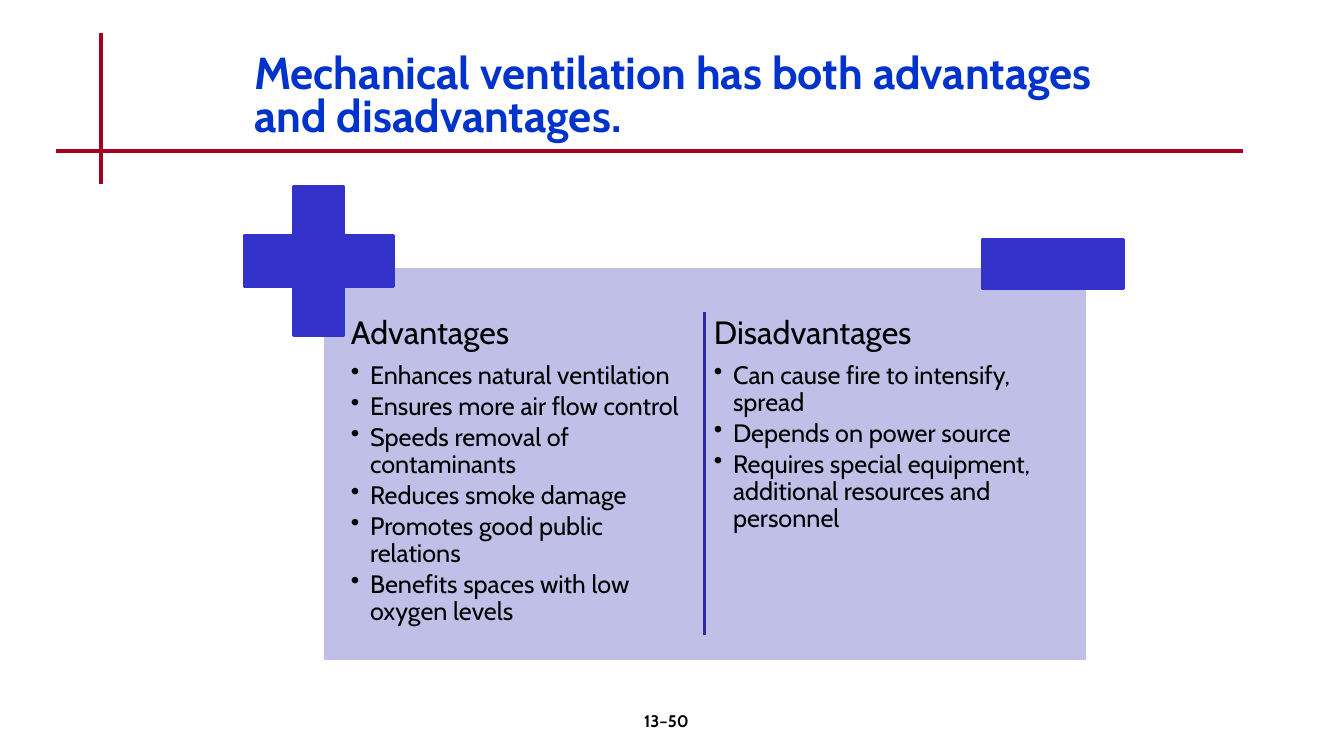
from lxml.etree import SubElement
from pptx import Presentation
from pptx.dml.color import RGBColor
from pptx.enum.shapes import MSO_CONNECTOR as Link, MSO_SHAPE as Kind
from pptx.enum.text import MSO_ANCHOR as Anchor, MSO_AUTO_SIZE as Fit, PP_ALIGN as Align
from pptx.oxml.ns import qn
from pptx.util import Inches, Pt

FONT = "Cabin"
RED, BLUE, NAVY = "A50021", "3333CC", "2929A3"
COLS = [
    (3.43, "Advantages", [
        "Enhances natural ventilation",
        "Ensures more air flow control",
        "Speeds removal of contaminants",
        "Reduces smoke damage",
        "Promotes good public relations",
        "Benefits spaces with low oxygen levels",
    ]),
    (7.03, "Disadvantages", [
        "Can cause fire to intensify, spread",
        "Depends on power source",
        "Requires special equipment, additional resources and personnel",
    ]),
]


def rgb(code):
    return RGBColor.from_string(code)


def write(para, text, size=18, color="000000", bold=False, align=Align.LEFT,
          lead=1.0, after=0, bullet=False):
    """Fill one paragraph with formatted text."""
    props = para._p.get_or_add_pPr()
    para.alignment = align
    para.line_spacing = lead
    para.space_before = Pt(0)
    para.space_after = Pt(after)
    if bullet:
        props.set("marL", str(Inches(0.19)))
        props.set("indent", str(-Inches(0.19)))
        SubElement(props, qn("a:buChar")).set("char", "•")
    run = para.add_run()
    run.text = text
    font = run.font
    font.name, font.size, font.bold = FONT, Pt(size), bold
    font.color.rgb = rgb(color)


class Board:
    """Holds the slide and draws its elements."""

    def __init__(self, deck):
        self.slide = deck.slides.add_slide(deck.slide_layouts[5])
        self.shapes = self.slide.shapes

    def title(self, text, *box):
        head = self.shapes.title
        head.left, head.top, head.width, head.height = map(Inches, box)
        frame = head.text_frame
        frame.word_wrap, frame.auto_size = True, Fit.NONE
        frame.vertical_anchor = Anchor.MIDDLE
        write(frame.paragraphs[0], text, size=32, color="0033CC", bold=True, lead=0.8)

    def line(self, x1, y1, x2, y2, color, width):
        link = self.shapes.add_connector(
            Link.STRAIGHT, *map(Inches, (x1, y1, x2, y2)))
        link.line.color.rgb = rgb(color)
        link.line.width = Pt(width)
        SubElement(link._element.spPr, qn("a:effectLst"))

    def shape(self, kind, *box, fill, edge):
        item = self.shapes.add_shape(kind, *map(Inches, box))
        item.shadow.inherit = False
        item.fill.solid()
        item.fill.fore_color.rgb = rgb(fill)
        item.line.color.rgb = rgb(edge)
        item.line.width = Pt(2)
        return item

    def text(self, *box, inset=0.1):
        """Add an empty text box and return its frame."""
        frame = self.shapes.add_textbox(*map(Inches, box)).text_frame
        frame.word_wrap = True
        frame.margin_left = frame.margin_right = Inches(inset)
        frame.margin_top = frame.margin_bottom = Inches(0.05)
        return frame

    def column(self, left, head, points):
        frame = self.text(left, 3.09, 3.52, 3.35, inset=0.05)
        write(frame.paragraphs[0], head, size=23, lead=0.9, after=8)
        for point in points:
            write(frame.add_paragraph(), point, lead=0.9, after=2.7, bullet=True)


def main():
    deck = Presentation()
    deck.slide_width, deck.slide_height = Inches(13.33), Inches(7.5)
    board = Board(deck)
    board.line(1, 0.33, 1, 1.83, RED, 3)
    board.line(0.56, 1.5, 12.33, 1.5, RED, 3)
    board.title("Mechanical ventilation has both advantages and disadvantages.",
                2.42, 0.47, 8.96, 1)
    page = board.text(5.22, 7, 2.78, 0.5)
    write(page.paragraphs[0], "13–50", size=12, bold=True, align=Align.CENTER)
    board.shape(Kind.RECTANGLE, 3.2, 2.64, 7.59, 3.92, fill="BFBFE7", edge="FFFFFF")
    for col in COLS:
        board.column(*col)
    plus = board.shape(Kind.CROSS, 2.42, 1.85, 1.48, 1.48, fill=BLUE, edge=BLUE)
    plus.adjustments[0] = 0.33
    board.shape(Kind.RECTANGLE, 9.74, 2.38, 1.4, 0.48, fill=BLUE, edge=BLUE)
    board.line(6.99, 3.1, 6.99, 6.3, NAVY, 2)
    deck.save("out.pptx")


if __name__ == "__main__":
    main()
